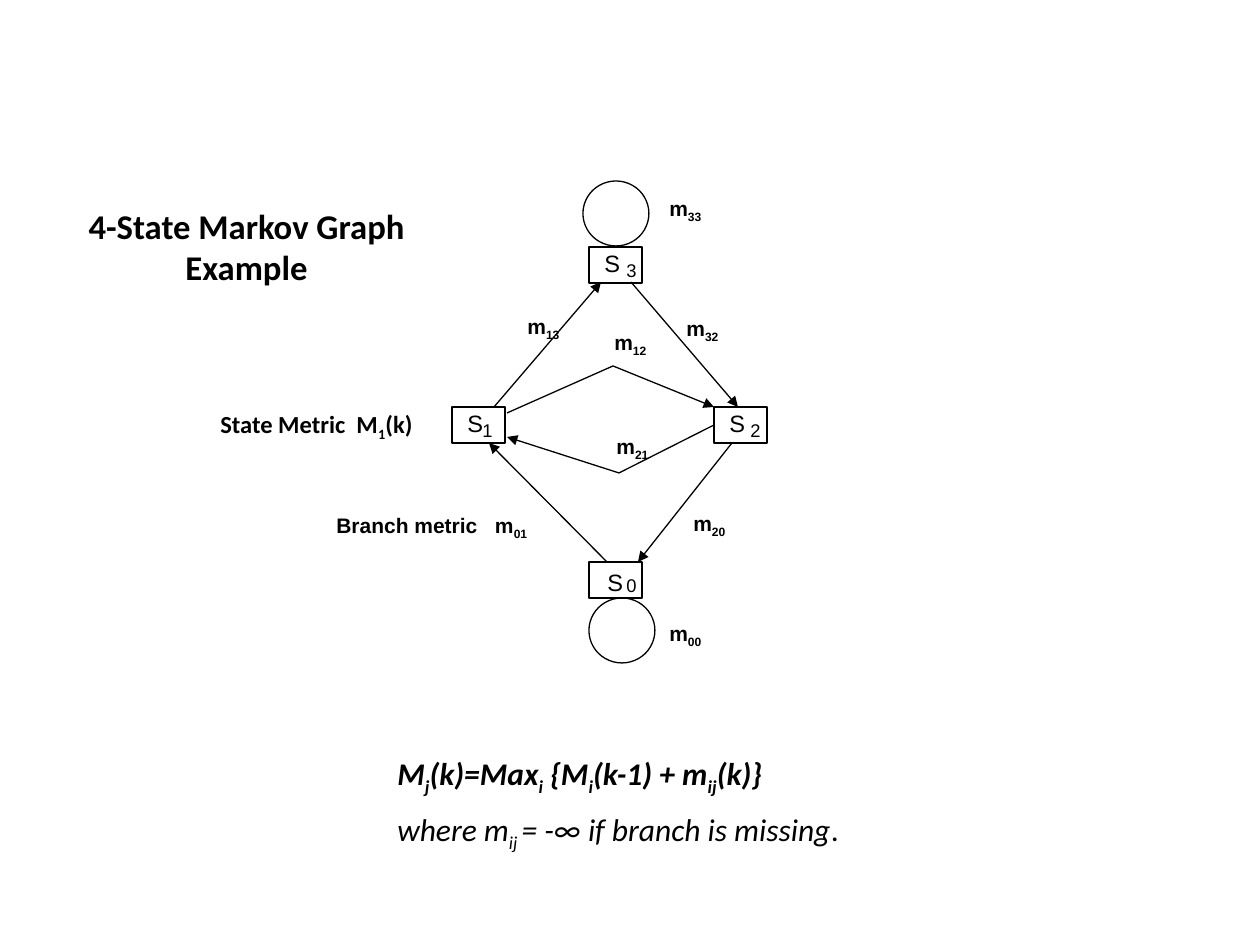
"""Build a slide with a four-state Markov graph and its metric rule."""
from lxml.etree import SubElement
from pptx import Presentation
from pptx.dml.color import RGBColor as RGB
from pptx.enum.shapes import MSO_CONNECTOR as Link, MSO_SHAPE as Kind
from pptx.enum.text import MSO_ANCHOR as Anchor, MSO_AUTO_SIZE as Auto, PP_ALIGN as Align
from pptx.oxml.ns import qn
from pptx.util import Pt

PX = 914400 // 126
INK = RGB.from_string("000000")
WIDE, HIGH = 53, 36

deck = Presentation()
deck.slide_width, deck.slide_height = 1260 * PX, 945 * PX
shapes = deck.slides.add_slide(deck.slide_layouts[6]).shapes


def write(box, rows, size, font="Arial", bold=False, italic=False, wrap=False):
    """Add a text box; in each row, text between bars is subscript."""
    area = shapes.add_textbox(*[n * PX for n in box])
    frame = area.text_frame
    frame.word_wrap = wrap
    frame.auto_size = Auto.SHAPE_TO_FIT_TEXT
    for i, row in enumerate(rows):
        para = frame.add_paragraph() if i else frame.paragraphs[0]
        for j, part in enumerate(row.split("|")):
            if part:
                run = para.add_run()
                run.text = part
                face = run.font
                face.name, face.size = font, Pt(size)
                face.bold, face.italic = bold, italic
                face.color.rgb = INK
                if j % 2:
                    run._r.get_or_add_rPr().set("baseline", "-25000")
    return frame


def draw(kind, box):
    """Add an unfilled black outline."""
    shape = shapes.add_shape(kind, *[n * PX for n in box])
    shape.shadow.inherit = False
    shape.fill.background()
    shape.line.color.rgb = INK
    shape.line.width = Pt(0.75)
    return shape


title = write((59, 190, 375, 112), ["4-State Markov Graph Example"], 19.8, "Calibri", True, wrap=True)
title.auto_size = Auto.NONE
title.vertical_anchor = Anchor.MIDDLE
title.paragraphs[0].alignment = Align.CENTER

states = [
    ("1", 452, 407, (3, -4), (18, 6, 29)),
    ("2", 714, 407, (3, -4), (24, 6, 35)),
    ("0", 589, 562, (6, 0), (25, 6, 29)),
    ("3", 589, 247, (3, -4), (25, 6, 35)),
]
nodes = {}
for name, x, y, (dx, dy), (nx, ny, width) in states:
    nodes[name] = draw(Kind.RECTANGLE, (x, y, WIDE, HIGH))
    write((x + dx, y + dy, 42, 42), ["S"], 13.5)
    write((x + nx, y + ny, width, 35), [name], 10.5)

for x, y in [(583, 181), (589, 598)]:
    draw(Kind.OVAL, (x, y, 66, 65))

top, low = (613, 366), (619, 473)
edges = [
    ((494, 407), (601, 282), True, None),
    ((732, 443), (638, 562), True, None),
    ((631, 282), (738, 407), True, None),
    ((607, 562), (489, 443), True, None),
    (top, (714, 407), True, None),
    (low, (507, 437), True, None),
    ((507, 413), top, False, None),
    ((714, 425), low, False, "2"),
]
for start, end, arrow, node in edges:
    edge = shapes.add_connector(Link.STRAIGHT, *[n * PX for n in start + end])
    edge.line.color.rgb = INK
    edge.line.width = Pt(0.75)
    if arrow:
        SubElement(edge.line._get_or_add_ln(), qn("a:tailEnd"), type="triangle")
    SubElement(edge._element.spPr, qn("a:effectLst"))
    if node:
        edge.begin_connect(nodes[node], 1)

labels = [
    ("13", 515, 307), ("33", 657, 189), ("00", 657, 614), ("32", 674, 309),
    ("20", 681, 504), ("12", 602, 323), ("21", 604, 427),
]
for pair, x, y in labels:
    write((x, y, 60, 38), [f"m|{pair}|"], 12, bold=True)
write((324, 506, 220, 38), ["Branch metric   m|01|"], 12, bold=True, wrap=True)
write((208, 403, 236, 43), ["State Metric  M|1|(k)"], 14, "Calibri", True, wrap=True)

rule = write(
    (385, 745, 491, 105),
    ["M|j|(k)=Max|i| {M|i|(k-1) + m|ij|(k)}", "where m|ij |= -∞ if branch is missing||."],
    18, "Calibri", True, True, True,
)
for para in rule.paragraphs:
    para.line_spacing = 1.06
    para.space_after = Pt(6)
note = rule.paragraphs[1].runs
for run in note:
    run.font.bold = False
note[-1].font.italic = False

deck.save("out.pptx")
